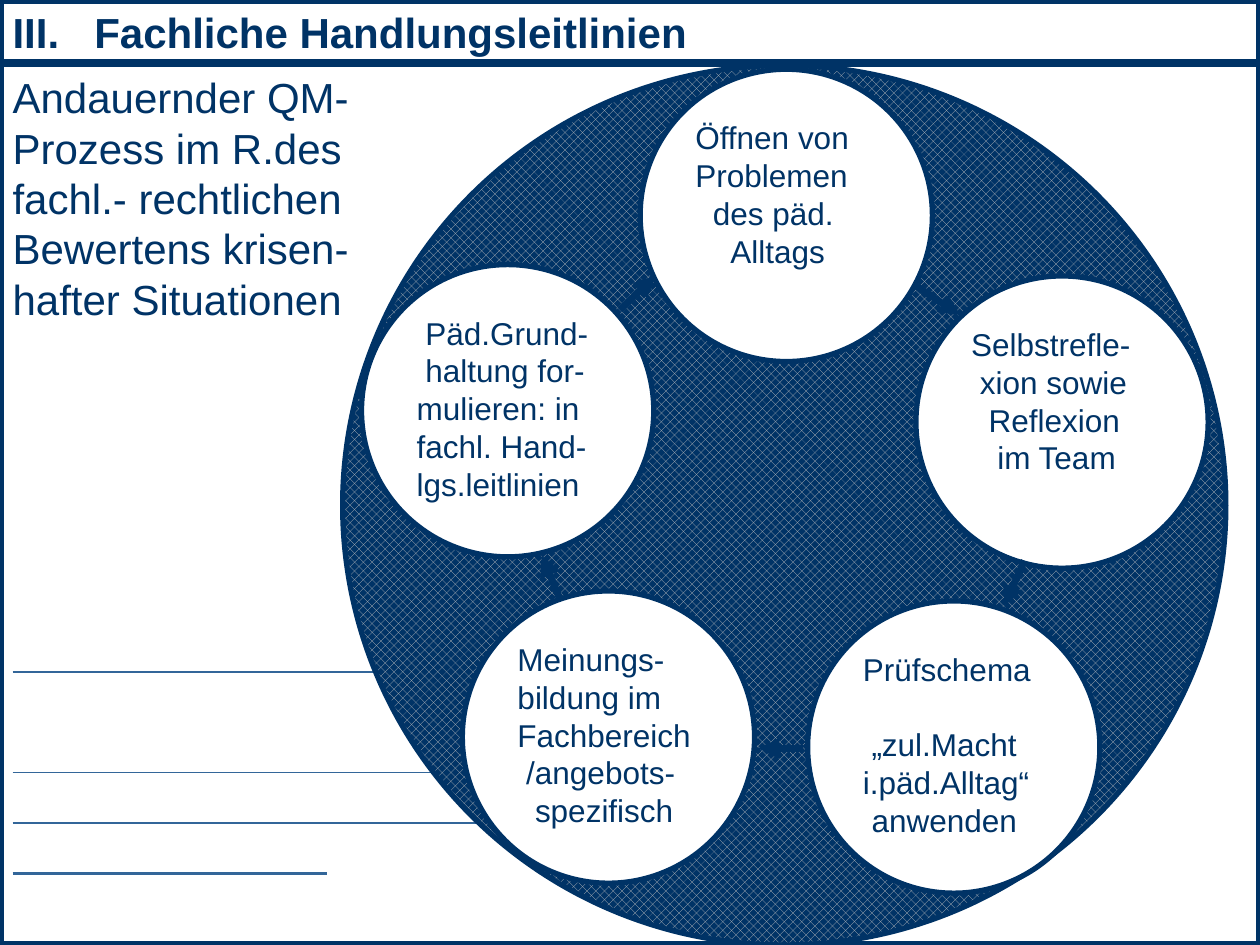
from lxml import etree
from pptx import Presentation
from pptx import util as u
from pptx.dml.color import RGBColor
from pptx.enum import dml, shapes, text
from pptx.oxml.ns import qn

COLORS = {"navy": "003366", "rule": "336699", "silver": "C0C0C0", "white": "FFFFFF"}
FONT = "Arial"
SPACE = 5  # indent step, about one blank at 18 pt
DIAMETER = 167


def color(name):
    return RGBColor.from_string(COLORS[name])


class SlideBuilder:
    def __init__(self, slide):
        self.slide = slide

    def outline(self, shape, width, name="navy"):
        shape.line.color.rgb = color(name)
        shape.line.width = u.Pt(width)

    def place(self, shape, left, top, width, height):
        """Position a placeholder and bring it to the front."""
        shape.left, shape.top = u.Pt(left), u.Pt(top)
        shape.width, shape.height = u.Pt(width), u.Pt(height)
        self.slide.shapes._spTree.append(shape._element)

    def shape(self, kind, left, top, width, height, line_width):
        shape = self.slide.shapes.add_shape(
            kind, u.Pt(left), u.Pt(top), u.Pt(width), u.Pt(height))
        shape.shadow.inherit = False
        shape.fill.solid()
        shape.fill.fore_color.rgb = color("white")
        self.outline(shape, line_width)
        return shape

    def indent(self, paragraph, left, first=0):
        properties = paragraph._p.get_or_add_pPr()
        properties.set("marL", str(u.Pt(left)))
        properties.set("indent", str(u.Pt(first)))

    def set_lines(self, shape, lines, size, bold=False, anchor=text.MSO_ANCHOR.TOP):
        frame = shape.text_frame
        frame.text = "\n".join(lines)
        frame.word_wrap = True
        frame.auto_size = text.MSO_AUTO_SIZE.NONE
        frame.vertical_anchor = anchor
        frame.margin_left = frame.margin_right = u.Pt(7.2)
        frame.margin_top = frame.margin_bottom = u.Pt(3.6)
        for paragraph in frame.paragraphs:
            paragraph.alignment = text.PP_ALIGN.LEFT
            paragraph.line_spacing = u.Pt(size * 1.2)
            paragraph.space_before = paragraph.space_after = u.Pt(0)
            self.indent(paragraph, 0)
            etree.SubElement(paragraph._p.get_or_add_pPr(), qn("a:buNone"))
            for run in paragraph.runs:
                run.font.name = FONT
                run.font.size = u.Pt(size)
                run.font.bold = bold
                run.font.color.rgb = color("navy")
        return frame.paragraphs

    def line(self, start, end, width, name="navy", arrow=False):
        points = [u.Pt(value) for value in (*start, *end)]
        connector = self.slide.shapes.add_connector(shapes.MSO_CONNECTOR.STRAIGHT, *points)
        self.outline(connector, width, name)
        if arrow:
            line = connector._element.spPr.find(qn("a:ln"))
            etree.SubElement(line, qn("a:tailEnd"), type="triangle")
        etree.SubElement(connector._element.spPr, qn("a:effectLst"))

    def step(self, left, top, lines, indents):
        circle = self.shape(shapes.MSO_SHAPE.OVAL, left, top, DIAMETER, DIAMETER, 3)
        paragraphs = self.set_lines(circle, lines, 18)
        for paragraph, blanks in zip(paragraphs, indents):
            self.indent(paragraph, blanks * SPACE)
        return paragraphs


def main():
    presentation = Presentation()
    presentation.slide_width, presentation.slide_height = u.Pt(720), u.Pt(540)
    slide = presentation.slides.add_slide(presentation.slide_layouts[1])
    builder = SlideBuilder(slide)

    # Frame and ruled lines
    builder.shape(shapes.MSO_SHAPE.RECTANGLE, 0, -1.4, 720, 541.4, 5)
    for y, right, width in ((384, 224, 1), (441.5, 260, 1), (470.3, 290, 1), (499, 187, 1.5)):
        builder.line((7.2, y), (right, y), width, "rule")

    # Introductory text
    body = slide.placeholders[1]
    builder.place(body, 0, 37.4, 224, 152.6)
    builder.set_lines(body, ["Andauernder QM-", "Prozess im R.des", "fachl.- rechtlichen",
                             "Bewertens krisen-", "hafter Situationen"], 24)

    # Patterned background circle
    cycle = builder.shape(shapes.MSO_SHAPE.OVAL, 195.8, 37.4, 504.7, 502.6, 3)
    cycle.fill.patterned()
    cycle.fill.pattern = dml.MSO_PATTERN.PERCENT_50
    cycle.fill.fore_color.rgb = color("silver")
    cycle.fill.back_color.rgb = color("navy")

    # Process steps, clockwise from the top
    builder.step(365.8, 39.6, ["Öffnen von", "Problemen", "des päd.", "Alltags"], (0, 0, 2, 4))
    builder.step(523.4, 157.7, ["Selbstrefle-", "xion sowie", "Reflexion", "im Team"],
                 (0, 1, 2, 3))
    check = builder.step(461.5, 343.4, ["Prüfschema", "„zul.Macht", "i.päd.Alltag“", "anwenden"],
                         (0, 1, 0, 1))
    check[1].space_before = u.Pt(21.6)
    builder.step(264.2, 337.7, ["Meinungs-", "bildung im", "Fachbereich", "/angebots-", "spezifisch"],
                 (0, 0, 0, 1, 2))
    builder.step(206.6, 151.2, ["Päd.Grund-", "haltung for-", "mulieren: in", "fachl. Hand-",
                                "lgs.leitlinien"], (1, 1, 0, 0, 0))

    # Arrows between the steps
    for start, end in (((523.4, 163.4), (548.6, 180)), ((585.4, 320.4), (573.8, 346.3)),
                       ((458.6, 427.7), (433.4, 427.7)), ((320.4, 343.4), (309.6, 317.5)),
                       ((354.2, 177.1), (374.4, 157.7))):
        builder.line(start, end, 4, arrow=True)

    # Title bar
    title = slide.shapes.title
    builder.place(title, 0, 0, 720, 36)
    title.fill.solid()
    title.fill.fore_color.rgb = color("white")
    builder.outline(title, 5)
    heading = builder.set_lines(title, ["III.\tFachliche Handlungsleitlinien"], 24, True,
                                text.MSO_ANCHOR.MIDDLE)
    builder.indent(heading[0], 46.7, -46.7)

    presentation.save("out.pptx")


if __name__ == "__main__":
    main()
